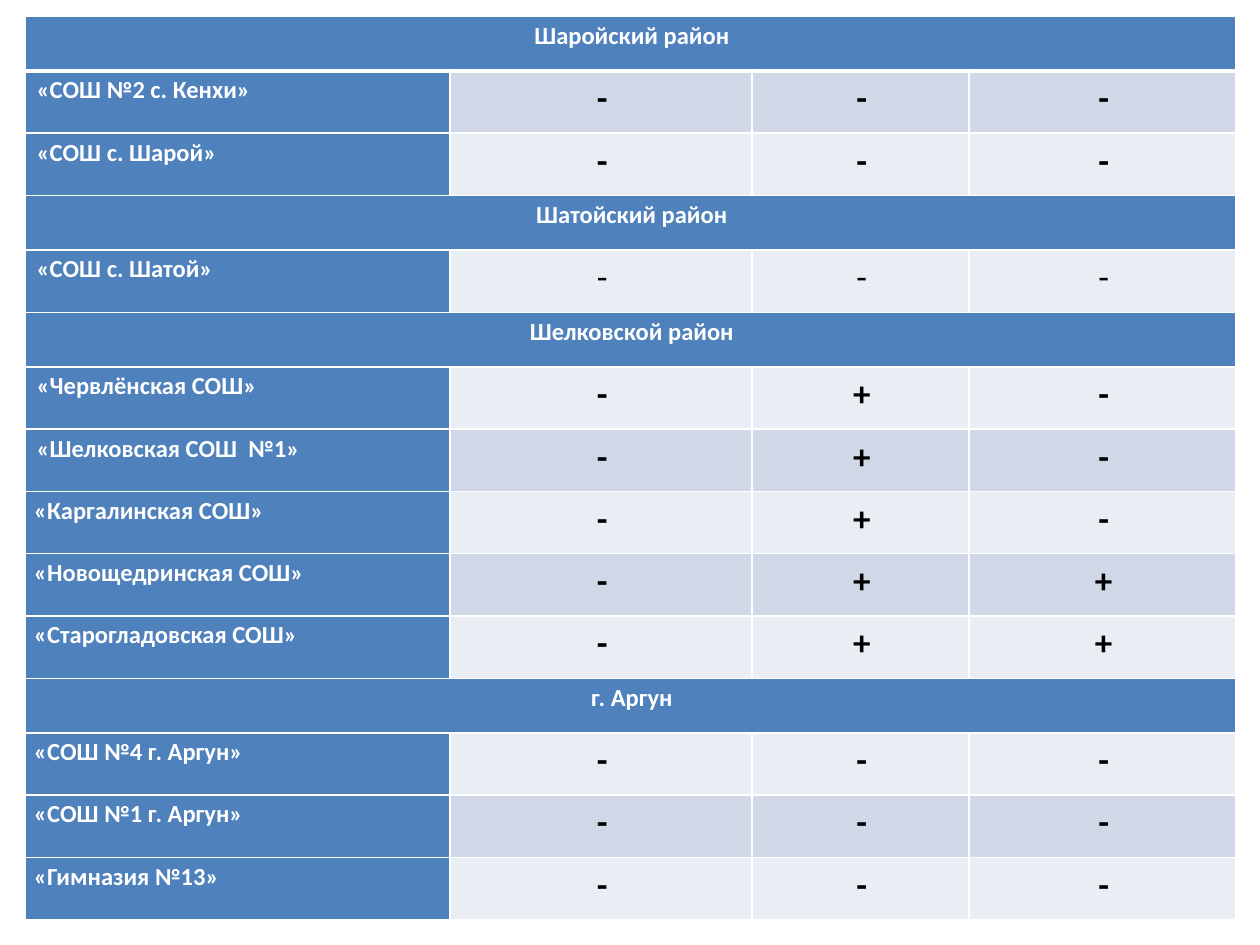
"""Build a slide with a table of schools grouped by district."""
from lxml import etree
from pptx import Presentation
from pptx.dml.color import RGBColor
from pptx.enum.text import PP_ALIGN
from pptx.oxml.ns import qn
from pptx.util import Inches, Pt

LEFT, CENTER = PP_ALIGN.LEFT, PP_ALIGN.CENTER
BLANK = 6
INK = {"head": "4F81BD", "odd": "D0D8E8", "even": "E9EDF4",
       "white": "FFFFFF", "black": "000000"}
COLS = (3.37, 2.4, 1.72, 2.12)
TALL, LOW = 0.49, 0.43
ROWS = [
    ("Шаройский район", ""),
    ("«СОШ №2 с. Кенхи»", "---"),
    ("«СОШ с. Шарой»", "---"),
    ("Шатойский район", ""),
    ("«СОШ с. Шатой»", "---"),
    ("Шелковской район", ""),
    ("«Червлёнская СОШ»", "-+-"),
    ("«Шелковская СОШ  №1»", "-+-"),
    ("«Каргалинская СОШ»", "-+-"),
    ("«Новощедринская СОШ»", "-++"),
    ("«Старогладовская СОШ»", "-++"),
    ("г. Аргун", ""),
    ("«СОШ №4 г. Аргун»", "---"),
    ("«СОШ №1 г. Аргун»", "---"),
    ("«Гимназия №13»", "---"),
]
THIN_ROW = 4
FLUSH_ROW = 8


class Deck:
    """Hold the style and the current slide."""

    def __init__(self, font="Calibri"):
        """Start a deck with one blank slide."""
        self.font = font
        self.prs = Presentation()
        self.prs.slide_width, self.prs.slide_height = Inches(10), Inches(7.5)
        self.slide = self.prs.slides.add_slide(self.prs.slide_layouts[BLANK])

    def table(self, left, top, width, height, cols, rows):
        """Add a table whose columns and rows share its size by weight."""
        frame = self.slide.shapes.add_table(
            len(rows), len(cols), *map(Inches, (left, top, width, height)))
        grid = frame.table
        for parts, weights, size, side in (
                (grid.columns, cols, width, "width"),
                (grid.rows, rows, height, "height")):
            for part, weight in zip(parts, weights):
                setattr(part, side, Inches(size * weight / sum(weights)))
        return grid

    def edges(self, cell, bottom=1):
        """Draw white borders around a cell."""
        props = cell._tc.get_or_add_tcPr()
        for side, width in zip("LRTB", (1, 1, 1, bottom)):
            line = etree.SubElement(props, qn(f"a:ln{side}"), w=str(Pt(width)))
            fill = etree.SubElement(line, qn("a:solidFill"))
            etree.SubElement(fill, qn("a:srgbClr"), val=INK["white"])

    def cell(self, cell, text, fill, ink, size, align, bold=True, indent=0.02):
        """Fill a cell and set its text."""
        cell.fill.solid()
        cell.fill.fore_color.rgb = RGBColor.from_string(INK[fill])
        cell.margin_left = cell.margin_right = Inches(0.07)
        cell.margin_top = cell.margin_bottom = 0
        cell.text = text
        para = cell.text_frame.paragraphs[0]
        para._p.get_or_add_pPr().set("marL", str(Inches(indent)))
        para.alignment, para.line_spacing = align, 1.15
        font = para.font
        font.name, font.size, font.bold = self.font, Pt(size), bold
        font.color.rgb = RGBColor.from_string(INK[ink])


def main():
    """Build and save the slide."""
    deck = Deck()
    heights = [TALL if marks else LOW for _, marks in ROWS]
    grid = deck.table(0.2, 0.13, 9.61, 7.17, COLS, heights)
    for row, (name, marks) in enumerate(ROWS):
        cells = [grid.cell(row, col) for col in range(len(COLS))]
        for cell in cells:
            deck.edges(cell, 1 if row else 3)
        if not marks:
            cells[0].merge(cells[-1])
        indent = 0 if marks and row >= FLUSH_ROW else 0.02
        deck.cell(cells[0], name, "head", "white", 14,
                  LEFT if marks else CENTER, indent=indent)
        for cell, mark in zip(cells[1:], marks):
            deck.cell(cell, mark, "odd" if row % 2 else "even", "black", 20,
                      CENTER, bold=row != THIN_ROW)
    deck.prs.save("out.pptx")


if __name__ == "__main__":
    main()
